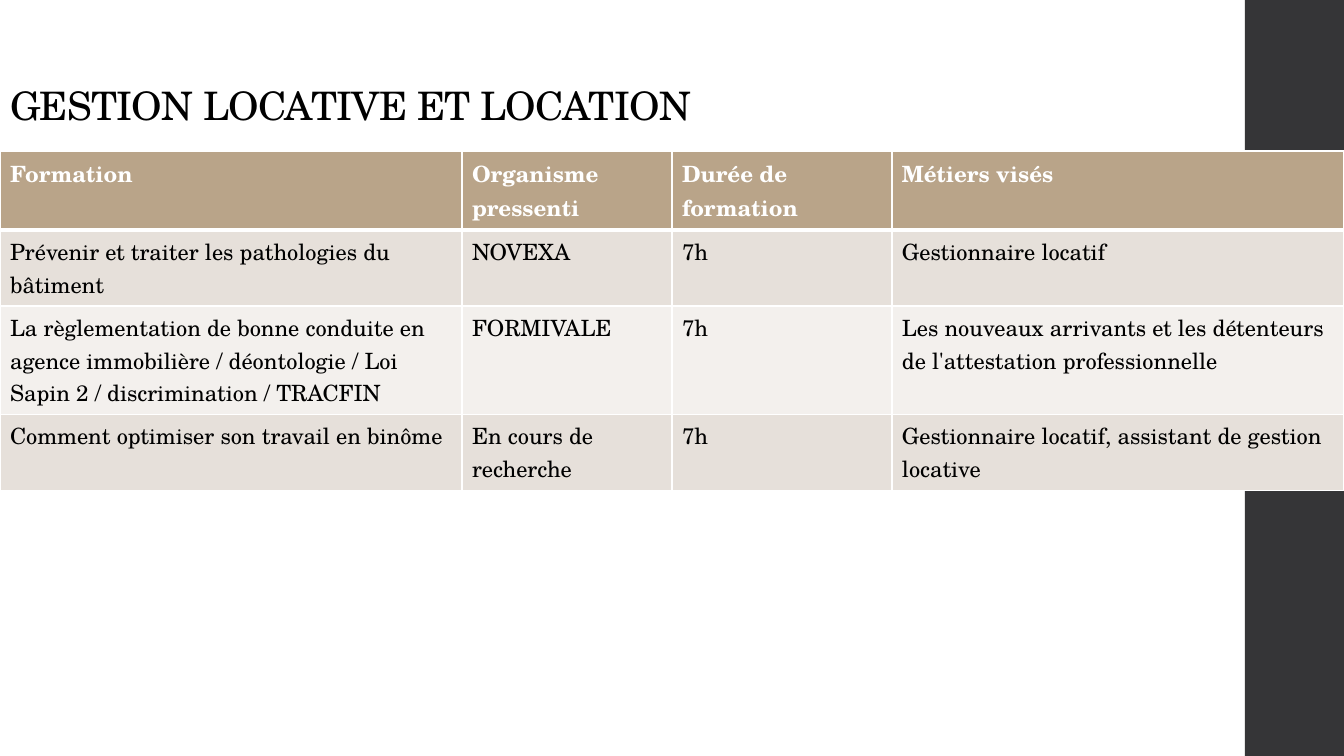
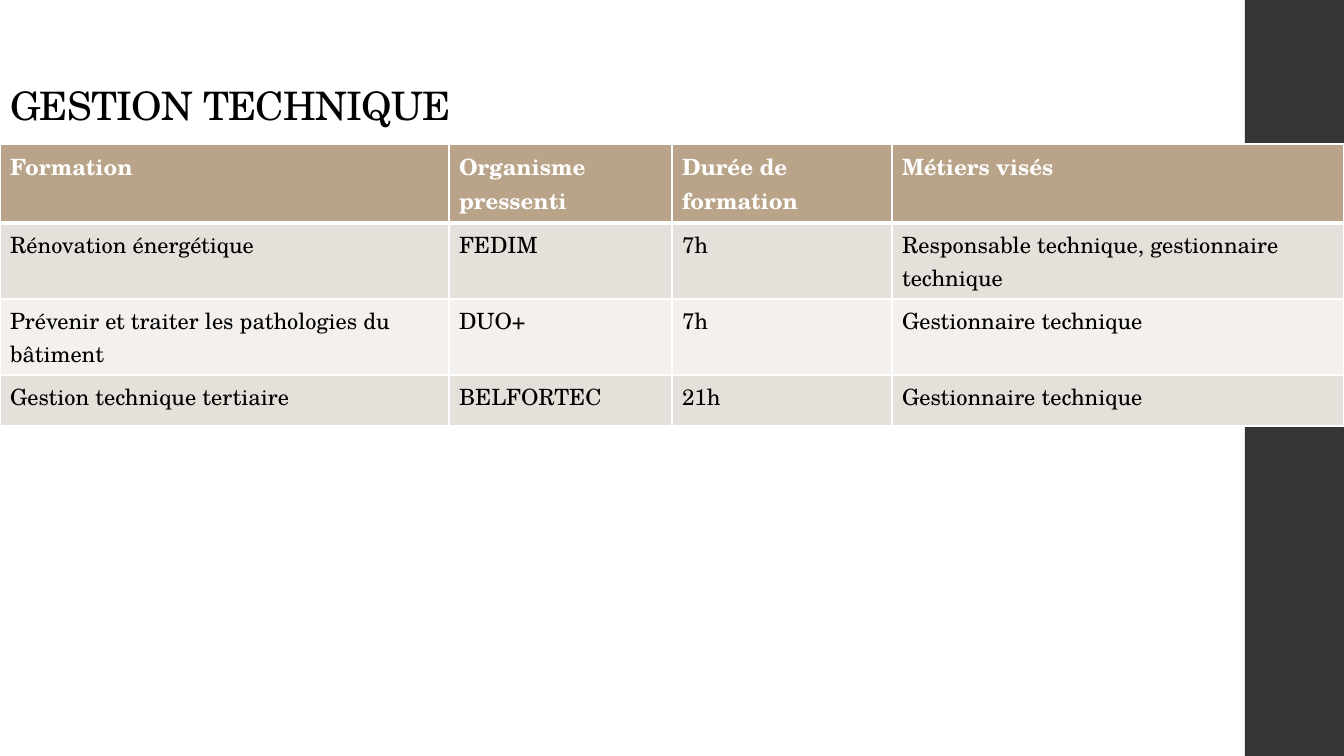
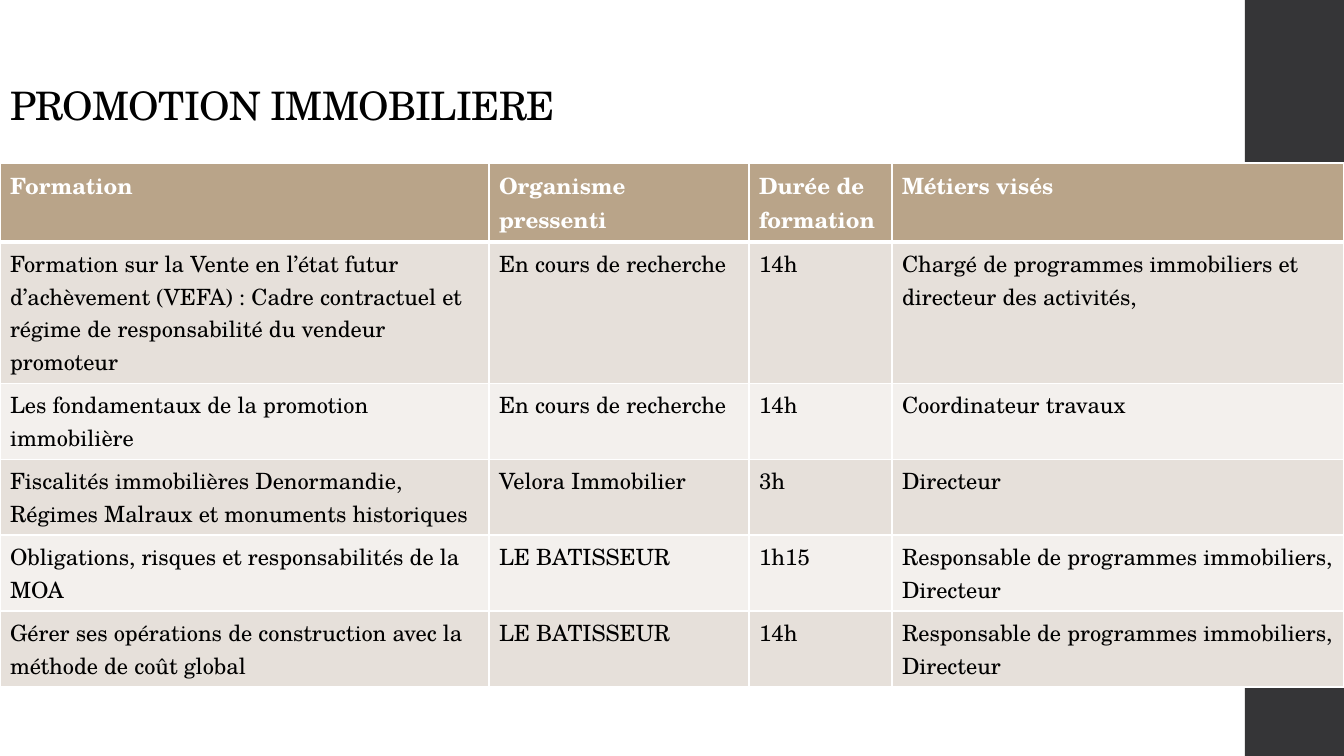
from lxml import etree
from pptx import Presentation
from pptx import util as u
from pptx.dml.color import RGBColor
from pptx.enum import shapes, text
from pptx.oxml.ns import qn

FONT = "TeX Gyre Schola"
BLACK = RGBColor(0x00, 0x00, 0x00)
WHITE = RGBColor(0xFF, 0xFF, 0xFF)
DARK = RGBColor(0x35, 0x35, 0x37)
TAN = RGBColor(0xB9, 0xA4, 0x89)
SAND = RGBColor(0xE6, 0xE0, 0xDA)
PALE = RGBColor(0xF3, 0xF0, 0xED)
WIDE, HIGH = 1344, 756
SCALE = 12192000 / WIDE
HEAD = ("Formation", "Organisme pressenti", "Durée de formation", "Métiers visés")

# title, title width, table top, column widths, row heights, rows
PAGES = [
    ("GESTION LOCATIVE ET LOCATION", 1058, 151, (462, 210, 220, 452), (79, 76, 108, 76), [
        ("Prévenir et traiter les pathologies du bâtiment", "NOVEXA", "7h",
         "Gestionnaire locatif"),
        ("La règlementation de bonne conduite en agence immobilière / déontologie / "
         "Loi Sapin 2 / discrimination / TRACFIN", "FORMIVALE", "7h",
         "Les nouveaux arrivants et les détenteurs de l'attestation professionnelle"),
        ("Comment optimiser son travail en binôme", "En cours de recherche", "7h",
         "Gestionnaire locatif, assistant de gestion locative"),
    ]),
    ("GESTION TECHNIQUE", 1058, 144, (449, 223, 220, 452), (78, 76, 76, 51), [
        ("Rénovation énergétique", "FEDIM", "7h",
         "Responsable technique, gestionnaire technique"),
        ("Prévenir et traiter les pathologies du bâtiment", "DUO+", "7h",
         "Gestionnaire technique"),
        ("Gestion technique tertiaire", "BELFORTEC", "21h", "Gestionnaire technique"),
    ]),
    ("PROMOTION IMMOBILIERE", 1208, 163, (489, 260, 143, 452), (79, 141, 76, 75, 76, 76), [
        ("Formation sur la Vente en l’état futur d’achèvement (VEFA) : Cadre contractuel "
         "et régime de responsabilité du vendeur promoteur", "En cours de recherche", "14h",
         "Chargé de programmes immobiliers et directeur des activités,"),
        ("Les fondamentaux de la promotion immobilière", "En cours de recherche", "14h",
         "Coordinateur travaux"),
        ("Fiscalités immobilières Denormandie, Régimes Malraux et monuments historiques",
         "Velora Immobilier", "3h", "Directeur"),
        ("Obligations, risques et responsabilités de la MOA", "LE BATISSEUR", "1h15",
         "Responsable de programmes immobiliers, Directeur"),
        ("Gérer ses opérations de construction avec la méthode de coût global",
         "LE BATISSEUR", "14h", "Responsable de programmes immobiliers, Directeur"),
    ]),
]


def px(n):
    return u.Emu(round(n * SCALE))


def write(par, words, size, color, bold=False):
    run = par.add_run()
    run.text = words
    run.font.name = FONT
    run.font.size = u.Pt(size)
    run.font.bold = bold
    run.font.color.rgb = color
    return run


deck = Presentation()
deck.slide_width, deck.slide_height = px(WIDE), px(HIGH)
plan = deck.slide_layouts[5]

for name, width, top, cols, highs, rows in PAGES:
    slide = deck.slides.add_slide(plan)

    # The side band is made once and moved to the shared layout.
    if len(deck.slides) == 1:
        band = slide.shapes.add_shape(
            shapes.MSO_SHAPE.RECTANGLE, px(1245), 0, px(99), px(HIGH))
        band.shadow.inherit = False
        band.fill.solid()
        band.fill.fore_color.rgb = DARK
        band.line.fill.background()
        plan.shapes.element.insert(2, band.element)

    title = slide.shapes.title
    title.left, title.top, title.width, title.height = px(0), px(18), px(width), px(116)
    frame = title.text_frame
    frame.word_wrap = True
    frame.auto_size = text.MSO_AUTO_SIZE.NONE
    frame.vertical_anchor = text.MSO_ANCHOR.BOTTOM
    par = frame.paragraphs[0]
    par.alignment = text.PP_ALIGN.LEFT
    par.line_spacing = 0.9
    run = write(par, name, 28, BLACK)
    run.font._element.set("spc", "-50")

    grid = slide.shapes.add_table(
        len(highs), len(cols), 0, px(top), px(WIDE), px(sum(highs))).table
    for col, wide in zip(grid.columns, cols):
        col.width = px(wide)
    for i, (high, row) in enumerate(zip(highs, [HEAD] + rows)):
        grid.rows[i].height = px(high)
        for j, words in enumerate(row):
            cell = grid.cell(i, j)
            props = cell._tc.get_or_add_tcPr()
            for side in "LRTB":
                thick = (i, side) in ((0, "B"), (1, "T"))
                edge = etree.SubElement(
                    props, qn("a:ln" + side), w=str(u.Pt(3 if thick else 1)))
                fill = etree.SubElement(edge, qn("a:solidFill"))
                etree.SubElement(fill, qn("a:srgbClr"), val=str(WHITE))
            cell.fill.solid()
            cell.fill.fore_color.rgb = TAN if i == 0 else SAND if i % 2 else PALE
            write(cell.text_frame.paragraphs[0], words, 16,
                  BLACK if i else WHITE, bold=i == 0)

deck.save("out.pptx")
